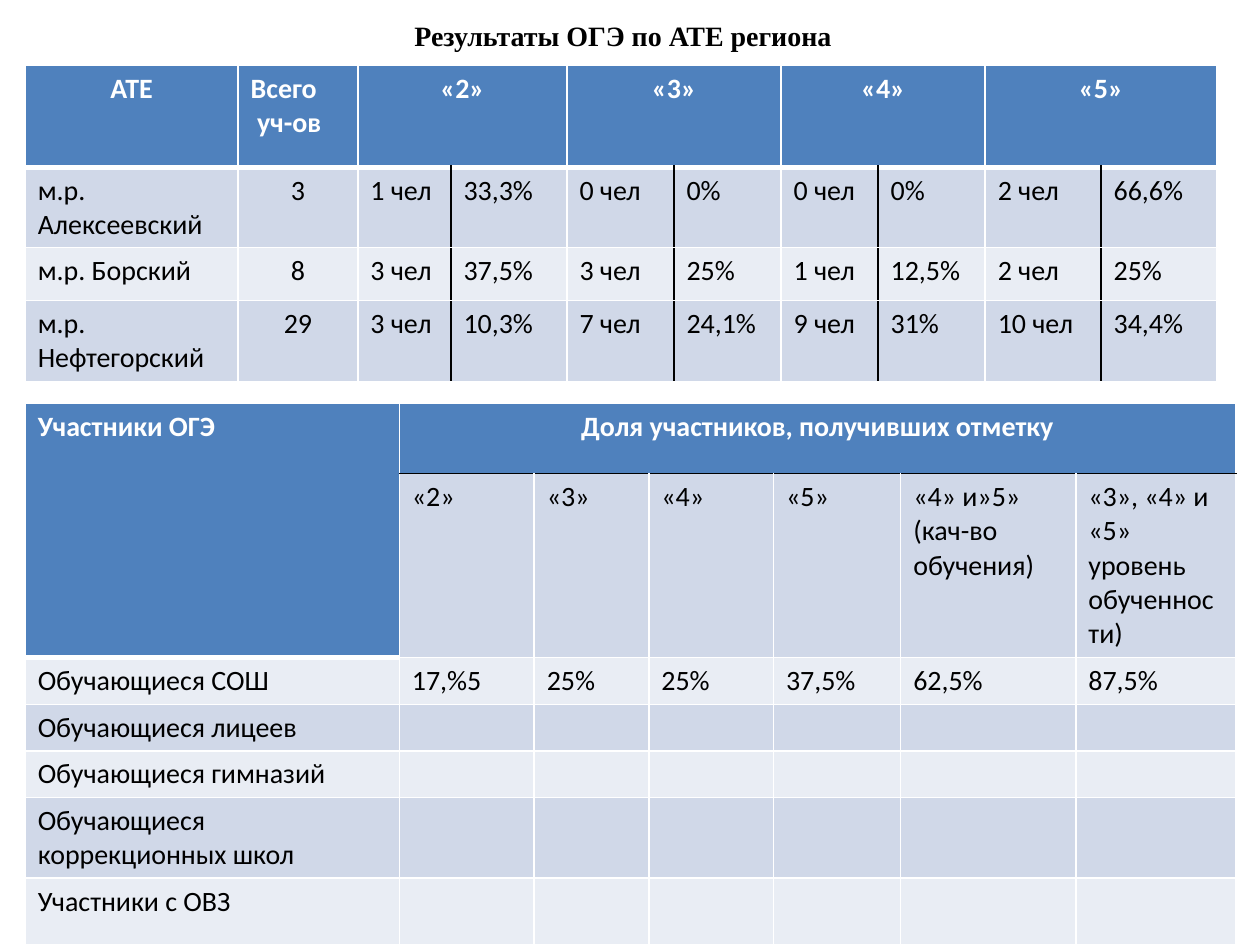
import pptx
import pptx.dml.color
import pptx.enum.text
import pptx.oxml
import pptx.oxml.ns
import pptx.util

Inches = pptx.util.Inches
CENTER = pptx.enum.text.PP_ALIGN.CENTER
WHITE, BLACK, BLUE = "FFFFFF", "000000", "4F81BD"
BANDS = ("D0D8E8", "E9EDF4")
HEAD = {"size": pptx.util.Pt(16), "name": "Calibri", "bold": True}
BODY = {**HEAD, "bold": False}
TITLE = {**HEAD, "name": "Times New Roman"}

RESULT_COLUMNS = [1.69, 0.95, 0.74, 0.92, 0.85, 0.85, 0.77, 0.85, 0.92, 0.92]
RESULT_HEIGHTS = [0.81, 0.63, 0.42, 0.65]
RESULTS = [
    ["АТЕ", "Всего\n уч-ов", "«2»", "", "«3»", "", "«4»", "", "«5»", ""],
    ["м.р. Алексеевский", "3", "1 чел", "33,3%", "0 чел", "0%",
     "0 чел", "0%", "2 чел", "66,6%"],
    ["м.р. Борский", "8", "3 чел", "37,5%", "3 чел", "25%",
     "1 чел", "12,5%", "2 чел", "25%"],
    ["м.р. Нефтегорский", "29", "3 чел", "10,3%", "7 чел", "24,1%",
     "9 чел", "31%", "10 чел", "34,4%"],
]

SHARE_COLUMNS = [2.97, 1.07, 0.91, 0.99, 1.01, 1.39, 1.27]
SHARE_HEIGHTS = [0.56, 1.46, 0.37, 0.37, 0.37, 0.64, 0.53]
SHARES = [
    ["Участники ОГЭ", "Доля участников, получивших отметку"],
    ["", "«2»", "«3»", "«4»", "«5»", "«4» и»5» (кач-во обучения)",
     "«3», «4» и «5» уровень обученности)"],
    ["Обучающиеся СОШ", "17,%5", "25%", "25%", "37,5%", "62,5%", "87,5%"],
    ["Обучающиеся лицеев"],
    ["Обучающиеся гимназий"],
    ["Обучающиеся коррекционных школ"],
    ["Участники с ОВЗ"],
]


def color(value):
    return pptx.dml.color.RGBColor.from_string(value)


def write(frame, text, style, ink, align=None):
    frame.text = text
    for para in frame.paragraphs:
        para.alignment = align
        if not para.runs:
            # Empty cells keep the table's text size, so rows stay low
            para._p.get_or_add_endParaRPr().set("sz", "1600")
        for span in para.runs:
            for name, value in style.items():
                setattr(span.font, name, value)
            span.font.color.rgb = color(ink)


def set_borders(cell, changes):
    sides = {side: (WHITE, 1) for side in "LRTB"}
    sides.update(changes)
    for side, (ink, width) in sides.items():
        cell._tc.get_or_add_tcPr().append(pptx.oxml.parse_xml(
            f'<a:ln{side} {pptx.oxml.ns.nsdecls("a")} w="{pptx.util.Pt(width)}">'
            f'<a:solidFill><a:srgbClr val="{ink}"/></a:solidFill></a:ln{side}>'))


def format_cell(cell, text, fill, borders, header=False, align=None):
    write(cell.text_frame, text, HEAD if header else BODY,
          WHITE if header else BLACK, align)
    set_borders(cell, borders)
    cell.fill.solid()
    cell.fill.fore_color.rgb = color(fill)


def add_grid(page, left, top, widths, heights):
    grid = page.shapes.add_table(
        len(heights), len(widths), Inches(left), Inches(top),
        Inches(sum(widths)), Inches(sum(heights))).table
    for column, width in zip(grid.columns, widths):
        column.width = Inches(width)
    for row, height in zip(grid.rows, heights):
        row.height = Inches(height)
    return grid


def add_title(page, left, top, width, height):
    box = page.shapes.add_textbox(
        Inches(left), Inches(top), Inches(width), Inches(height))
    box.text_frame.word_wrap = True
    write(box.text_frame, "Результаты ОГЭ по АТЕ региона", TITLE, BLACK)


def add_results(page, left, top):
    grid = add_grid(page, left, top, RESULT_COLUMNS, RESULT_HEIGHTS)
    for r, texts in enumerate(RESULTS):
        for c, text in enumerate(texts):
            header = r == 0
            borders = {}
            if header:
                borders["B"] = (WHITE, 3)
            elif r == 1:
                borders["T"] = (WHITE, 3)
            # Black rule between the count and the percentage of each mark
            if c >= 2 and not header:
                borders["L" if c % 2 else "R"] = (BLACK, 1)
            centered = c != 1 if header else c == 1
            format_cell(grid.cell(r, c), text,
                        BLUE if header else BANDS[(r - 1) % 2], borders,
                        header, CENTER if centered else None)
    for c in range(2, len(RESULT_COLUMNS), 2):
        grid.cell(0, c).merge(grid.cell(0, c + 1))


def add_shares(page, left, top):
    grid = add_grid(page, left, top, SHARE_COLUMNS, SHARE_HEIGHTS)
    last = len(SHARE_COLUMNS) - 1
    for r, texts in enumerate(SHARES):
        for c in range(last + 1):
            header = r == 0 or (r == 1 and c == 0)
            borders = {}
            # Thick rule under the side header, black one under the top header
            if c == 0 and r < 2:
                borders["B"] = (WHITE, 3)
            elif c == 0 and r == 2:
                borders["T"] = (WHITE, 3)
            elif r < 2:
                borders["T" if r else "B"] = (BLACK, 1)
            format_cell(grid.cell(r, c), texts[c] if c < len(texts) else "",
                        BLUE if header else BANDS[(r - 1) % 2], borders,
                        header, CENTER if header and c else None)
    grid.cell(0, 0).merge(grid.cell(1, 0))
    grid.cell(0, 1).merge(grid.cell(0, last))


def main():
    deck = pptx.Presentation()
    deck.slide_width, deck.slide_height = Inches(10), Inches(7.5)
    page = deck.slides.add_slide(deck.slide_layouts[6])
    add_title(page, 3.19, 0.1, 6.81, 0.67)
    add_results(page, 0.2, 0.52)
    add_shares(page, 0.2, 3.2)
    deck.save("out.pptx")


if __name__ == "__main__":
    main()
